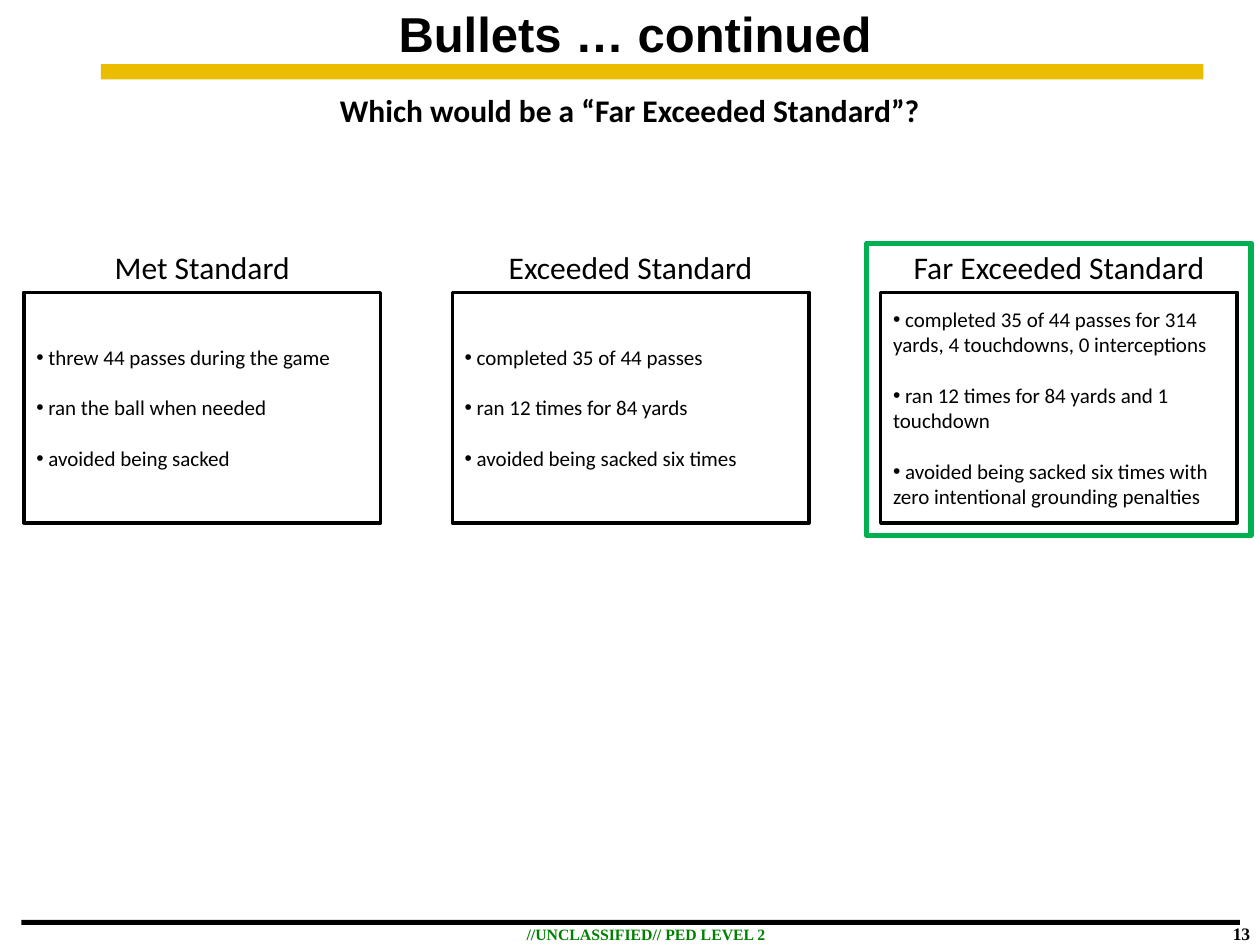
from dataclasses import dataclass

from lxml.etree import SubElement
from pptx import Presentation
from pptx.dml.color import RGBColor
from pptx.enum.shapes import MSO_SHAPE as Shape
from pptx.enum.text import MSO_ANCHOR as Anchor, PP_ALIGN as Align
from pptx.oxml.ns import qn
from pptx.util import Inches, Pt


@dataclass(frozen=True)
class Theme:
    ink: RGBColor = RGBColor(0x00, 0x00, 0x00)
    gold: RGBColor = RGBColor(0xEA, 0xBD, 0x00)
    marking: RGBColor = RGBColor(0x00, 0x80, 0x00)
    highlight: RGBColor = RGBColor(0x00, 0xB0, 0x50)
    title_font: str = "Arial"
    body_font: str = "Calibri"
    footer_font: str = "Times New Roman"
    title_size: Pt = Pt(28)
    heading_size: Pt = Pt(18)
    bullet_size: Pt = Pt(12)
    bullet_gap: Pt = Pt(14.6)
    number_size: Pt = Pt(10)
    marking_size: Pt = Pt(9)


THEME = Theme()

STANDARDS = [
    ("Met Standard", [
        "threw 44 passes during the game",
        "ran the ball when needed",
        "avoided being sacked",
    ]),
    ("Exceeded Standard", [
        "completed 35 of 44 passes",
        "ran 12 times for 84 yards",
        "avoided being sacked six times",
    ]),
    ("Far Exceeded Standard", [
        "completed 35 of 44 passes for 314 yards, 4 touchdowns, 0 interceptions",
        "ran 12 times for 84 yards and 1 touchdown",
        "avoided being sacked six times with zero intentional grounding penalties",
    ]),
]


def style(para, font, size, color=THEME.ink, bold=False, align=Align.CENTER):
    para.alignment = align
    para.font.name = font
    para.font.size = size
    para.font.bold = bold
    para.font.color.rgb = color


def add_label(page, box, text, *args, **kwargs):
    label = page.shapes.add_textbox(*map(Inches, box))
    label.text_frame.word_wrap = True
    para = label.text_frame.paragraphs[0]
    para.text = text
    style(para, *args, **kwargs)


def add_bar(page, box, color):
    bar = page.shapes.add_shape(Shape.RECTANGLE, *map(Inches, box))
    bar.shadow.inherit = False
    bar.fill.solid()
    bar.fill.fore_color.rgb = color
    bar.line.fill.background()


def add_outline(page, box, color, weight):
    outline = page.shapes.add_shape(Shape.RECTANGLE, *map(Inches, box))
    outline.shadow.inherit = False
    outline.fill.background()
    outline.line.color.rgb = color
    outline.line.width = Pt(weight)
    return outline


def add_header(page, box):
    left, top, width, height = box
    title = page.shapes.title
    title.left, title.top, title.width, title.height = map(Inches, box)
    frame = title.text_frame
    frame.margin_left = frame.margin_right = 0
    frame.margin_top = frame.margin_bottom = 0
    frame.vertical_anchor = Anchor.MIDDLE
    frame.text = "Bullets … continued"
    style(frame.paragraphs[0], THEME.title_font, THEME.title_size, bold=True)
    add_bar(page, (left + 0.72, top + height + 0.03, 8.75, 0.12), THEME.gold)


def add_standard(page, box, heading, bullets):
    left, top, width, height = box
    add_label(page, (left, top - 0.4, width, 0.4), heading,
              THEME.body_font, THEME.heading_size)
    frame = add_outline(page, box, THEME.ink, 2).text_frame
    frame.word_wrap = True
    frame.vertical_anchor = Anchor.MIDDLE
    for index, bullet in enumerate(bullets):
        para = frame.add_paragraph() if index else frame.paragraphs[0]
        para.text = f" {bullet}"
        if index:
            para.space_before = THEME.bullet_gap
        properties = para._p.get_or_add_pPr()
        SubElement(properties, qn("a:buFont"), typeface="Arial")
        SubElement(properties, qn("a:buChar"), char="•")
        style(para, THEME.body_font, THEME.bullet_size, align=Align.LEFT)


def add_comparison(page, box):
    left, top, width, height = box
    card_width = 2.83
    pitch = (width - card_width) / (len(STANDARDS) - 1)
    for index, (heading, bullets) in enumerate(STANDARDS):
        card = (left + index * pitch, top, card_width, height)
        add_standard(page, card, heading, bullets)
    answer = (card[0] - 0.11, top - 0.39, card_width + 0.22, height + 0.49)
    add_outline(page, answer, THEME.highlight, 3)


def add_footer(page, box):
    left, top, width, height = box
    add_bar(page, (left, top, width, 0.04), THEME.ink)
    add_label(page, (4, top - 0.01, 2.25, height), "//UNCLASSIFIED// PED LEVEL 2",
              THEME.footer_font, THEME.marking_size, THEME.marking, bold=True)
    add_label(page, (9.5, top - 0.02, 0.52, height), "13",
              THEME.footer_font, THEME.number_size, bold=True, align=Align.RIGHT)


def main():
    deck = Presentation()
    deck.slide_width, deck.slide_height = Inches(10), Inches(7.5)
    page = deck.slides.add_slide(deck.slide_layouts.get_by_name("Title Only"))
    add_header(page, (0.08, 0.04, 9.92, 0.44))
    add_label(page, (0, 0.67, 10, 0.4), "Which would be a “Far Exceeded Standard”?",
              THEME.body_font, THEME.heading_size, bold=True)
    add_comparison(page, (0.19, 2.32, 9.63, 1.83))
    add_footer(page, (0.17, 7.3, 9.67, 0.25))
    deck.save("out.pptx")


if __name__ == "__main__":
    main()
